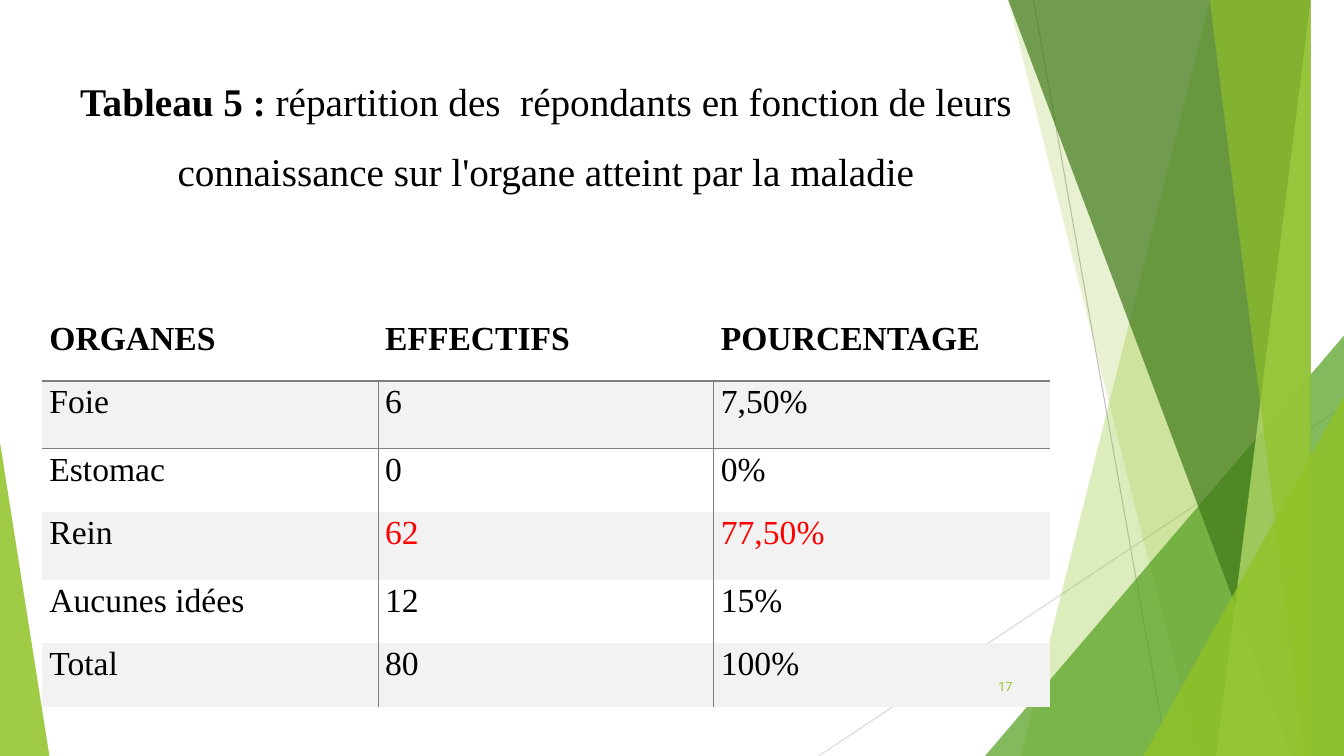
from lxml.etree import SubElement
from pptx import Presentation
from pptx.dml.color import RGBColor
from pptx.enum.shapes import MSO_CONNECTOR as Link, MSO_SHAPE as Shape
from pptx.enum.text import MSO_ANCHOR as Anchor, MSO_AUTO_SIZE as Fit, PP_ALIGN as Align
from pptx.oxml.ns import qn
from pptx.util import Inches, Pt

COLORS = {
    "black": "000000", "red": "FF0000", "lime": "90C226", "leaf": "54A021",
    "moss": "3F7819", "pale": "C0E474", "band": "F2F2F2", "rule": "7F7F7F",
    "gray": "BFBFBF", "mist": "D9D9D9",
}
SERIF = "Times New Roman"
WIDE, HIGH = 13.33, 7.5
NO_GRID = "{2D5ABB26-0587-4C30-8999-92F81FD0307C}"
ROWS = [
    ("ORGANES", "EFFECTIFS", "POURCENTAGE"),
    ("Foie", "6", "7,50%"),
    ("Estomac", "0", "0%"),
    ("Rein", "62", "77,50%"),
    ("Aucunes idées", "12", "15%"),
    ("Total", "80", "100%"),
]
HEIGHTS = [0.63, 0.67, 0.63, 0.67, 0.63, 0.63]


def rgb(name):
    return RGBColor.from_string(COLORS[name])


def style(run, size, color="black", font=SERIF, bold=False):
    run.font.size = Pt(size)
    run.font.name = font
    run.font.bold = bold
    run.font.color.rgb = rgb(color)


def paint(shape, color, alpha):
    shape.shadow.inherit = False
    shape.line.fill.background()
    shape.fill.solid()
    shape.fill.fore_color.rgb = rgb(color)
    tone = shape.element.spPr.find(qn("a:solidFill")).find(qn("a:srgbClr"))
    SubElement(tone, qn("a:alpha")).set("val", str(alpha * 1000))


def add_line(slide, start, end, color):
    line = slide.shapes.add_connector(Link.STRAIGHT, *map(Inches, start + end))
    line.line.color.rgb = rgb(color)
    line.line.width = Pt(0.75)
    SubElement(line.element.spPr, qn("a:effectLst"))


def add_facet(slide, box, upper, lower, color, alpha):
    left, top, width, height = box
    right, base = left + width, top + height
    pen = slide.shapes.build_freeform(upper, top, scale=Inches(1))
    pen.add_line_segments([(right, top), (right, base), (lower, base)], close=True)
    paint(pen.convert_to_shape(), color, alpha)


def add_wedge(slide, box, apex, color, alpha):
    wedge = slide.shapes.add_shape(Shape.ISOSCELES_TRIANGLE, *map(Inches, box))
    wedge.adjustments[0] = apex
    paint(wedge, color, alpha)


def add_decor(slide, box):
    left, top, width, height = box
    right, base = left + width, top + height
    edge = (left, top - 0.01, width, height + 0.01)
    add_line(slide, (10.25, top), (11.58, base), "gray")
    add_line(slide, (right, 4.03), (8.12, base), "mist")
    add_facet(slide, edge, 12.28, 10.04, "lime", 30)
    add_facet(slide, edge, 10.5, 11.83, "lime", 20)
    add_wedge(slide, (right - 3.56, base - 4.17, 3.56, 4.17), 1, "leaf", 72)
    for upper, lower, color, alpha in [
        (10.21, 12.91, "moss", 70),
        (13.03, 11.92, "pale", 70),
        (11.96, 13.18, "lime", 65),
    ]:
        add_facet(slide, edge, upper, lower, color, alpha)
    add_wedge(slide, (right - 1.99, base - 3.57, 1.99, 3.57), 1, "lime", 80)
    add_wedge(slide, (left, base - 3.11, 0.49, 3.11), 0, "lime", 85)


def add_title(slide, box):
    title = slide.shapes.title
    title.left, title.top, title.width, title.height = map(Inches, box)
    frame = title.text_frame
    frame.word_wrap = True
    frame.auto_size = Fit.SHAPE_TO_FIT_TEXT
    frame.vertical_anchor = Anchor.TOP
    para = frame.paragraphs[0]
    para.alignment = Align.CENTER
    para.line_spacing = 1.5
    for text, bold in [
        ("Tableau 5 : ", True),
        ("répartition des  répondants en fonction de leurs "
         "connaissance sur l'organe atteint par la maladie", False),
    ]:
        run = para.add_run()
        run.text = text
        style(run, 28, bold=bold)


def add_edge(cell, side):
    edge = SubElement(cell._tc.get_or_add_tcPr(), qn("a:ln" + side), w=str(Pt(1)))
    fill = SubElement(edge, qn("a:solidFill"))
    SubElement(fill, qn("a:srgbClr"), val=COLORS["rule"])


def fill_cell(cell, text, row, col):
    cell.margin_left = cell.margin_right = Inches(0.07)
    cell.margin_top = cell.margin_bottom = 0
    sides = {"L": row and col == 1, "R": row and col == 0,
             "T": row == 1, "B": row == 0}
    for side, drawn in sides.items():
        if drawn:
            add_edge(cell, side)
    if row % 2:
        cell.fill.solid()
        cell.fill.fore_color.rgb = rgb("band")
    else:
        cell.fill.background()
    para = cell.text_frame.paragraphs[0]
    para.text = text
    para.alignment = Align.JUSTIFY
    para.line_spacing = 1.07
    color = "red" if row == 3 and col else "black"
    style(para.runs[0], 24, color, bold=row == 0)


def add_grid(slide, box):
    frame = slide.shapes.add_table(len(ROWS), len(ROWS[0]), *map(Inches, box))
    table = frame.table
    table.first_row = table.horz_banding = False
    table._tbl.tblPr.find(qn("a:tableStyleId")).text = NO_GRID
    for column in table.columns:
        column.width = Inches(box[2] / len(ROWS[0]))
    for row, texts in enumerate(ROWS):
        table.rows[row].height = Inches(HEIGHTS[row])
        for col, text in enumerate(texts):
            fill_cell(table.cell(row, col), text, row, col)


def add_number(slide, box):
    frame = slide.shapes.add_textbox(*map(Inches, box)).text_frame
    frame.word_wrap = True
    frame.vertical_anchor = Anchor.MIDDLE
    para = frame.paragraphs[0]
    para.text = "17"
    para.alignment = Align.RIGHT
    style(para.runs[0], 9, "lime", "Roboto")


def main():
    deck = Presentation()
    deck.slide_width, deck.slide_height = Inches(WIDE), Inches(HIGH)
    slide = deck.slides.add_slide(deck.slide_layouts[5])
    add_decor(slide, (0, 0, WIDE, HIGH))
    add_grid(slide, (0.42, 3.15, 9.99, sum(HEIGHTS)))
    add_number(slide, (9.39, 6.61, 0.75, 0.4))
    add_title(slide, (0.69, 0.48, 9.45, 1.51))
    deck.save("out.pptx")


if __name__ == "__main__":
    main()
